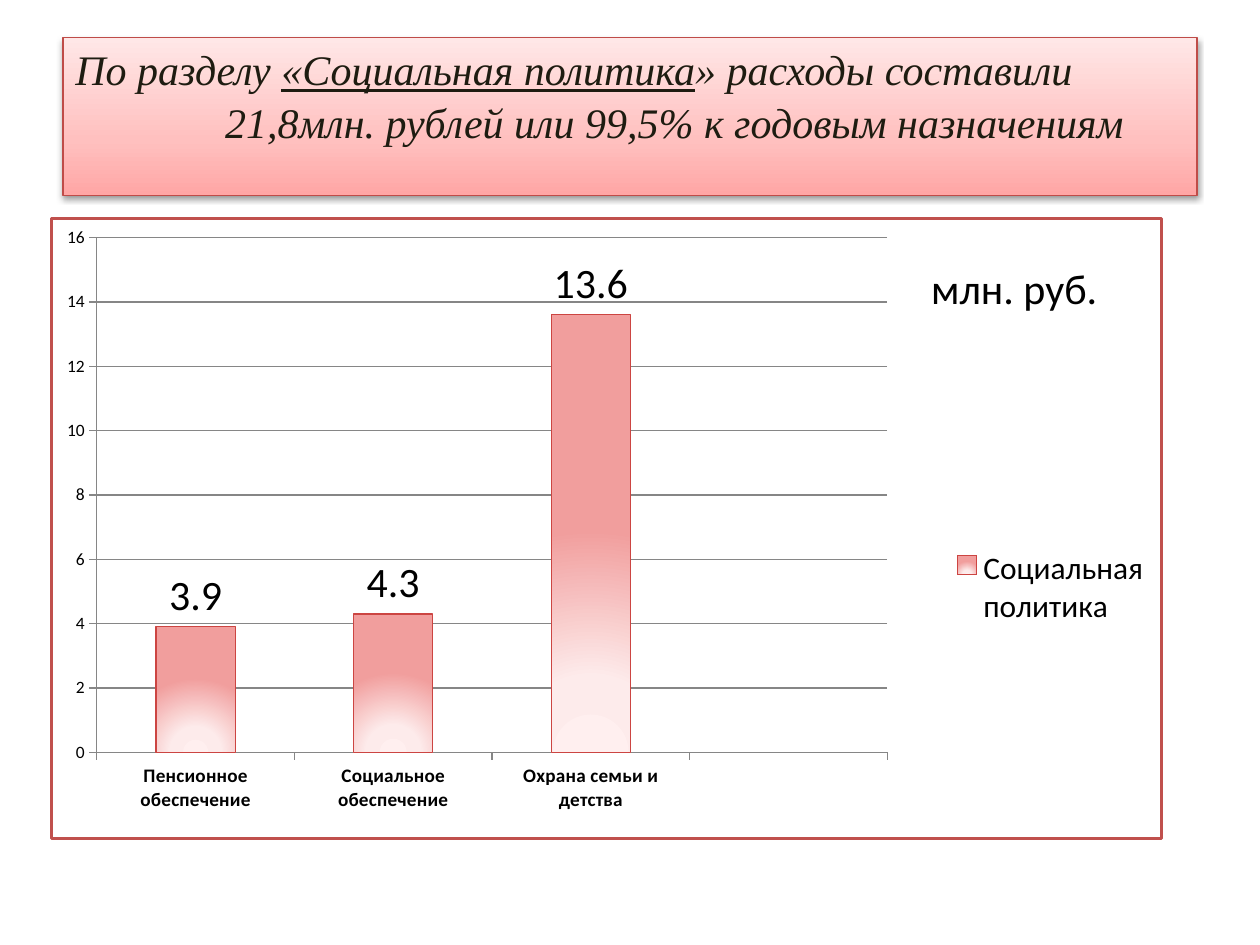
import pptx
import pptx.chart.data
import pptx.dml.color
import pptx.enum.chart
import pptx.enum.shapes
import pptx.enum.text
import pptx.oxml
import pptx.oxml.ns
import pptx.util


class Theme:
    title_font = "Times New Roman"
    body_font = "Calibri"
    title_color = "1E1C11"
    text_color = "000000"
    background = "FFFFFF"
    title_line = "BF4C48"
    chart_border = "C0504D"
    bar_line = "CC4542"
    grid_line = "868686"
    title_stops = [(0, "FFA6A5"), (35, "FFC0BF"), (100, "FFE7E7")]
    bar_stops = [(0, "FFEFEF"), (34, "FDEBEB"), (100, "F19E9D")]
    large = pptx.util.Pt(24)
    legend = pptx.util.Pt(18)
    category = pptx.util.Pt(11)
    small = pptx.util.Pt(10)


def color(value):
    return pptx.dml.color.RGBColor.from_string(value)


def set_gradient(properties, stops, direction):
    """Replace the solid fill of a shape or series with a gradient."""
    stop_xml = "".join(
        f'<a:gs pos="{position * 1000}"><a:srgbClr val="{value}"/></a:gs>'
        for position, value in stops)
    gradient = pptx.oxml.parse_xml(
        f'<a:gradFill {pptx.oxml.ns.nsdecls("a")} rotWithShape="1">'
        f'<a:gsLst>{stop_xml}</a:gsLst>{direction}</a:gradFill>')
    solid = properties.find(pptx.oxml.ns.qn("a:solidFill"))
    properties.replace(solid, gradient)


presentation = pptx.Presentation()
presentation.slide_width = pptx.util.Cm(25.4)
presentation.slide_height = pptx.util.Cm(19.05)
slide = presentation.slides.add_slide(presentation.slide_layouts[6])

# Title box
title = slide.shapes.add_shape(
    pptx.enum.shapes.MSO_SHAPE.RECTANGLE, pptx.util.Cm(1.27),
    pptx.util.Cm(0.76), pptx.util.Cm(22.86), pptx.util.Cm(3.18))
title.fill.solid()
title.line.color.rgb = color(Theme.title_line)
title.line.width = pptx.util.Pt(0.75)
title_properties = title._element.spPr
set_gradient(title_properties, Theme.title_stops,
             '<a:lin ang="16200000" scaled="1"/>')
title_properties.append(pptx.oxml.parse_xml(
    f'<a:effectLst {pptx.oxml.ns.nsdecls("a")}>'
    '<a:outerShdw blurRad="40000" dist="20000" dir="5400000" rotWithShape="0">'
    '<a:srgbClr val="000000"><a:alpha val="38000"/></a:srgbClr>'
    '</a:outerShdw></a:effectLst>'))

# Title text: the second line is indented
title_lines = [
    (0, [("По разделу ", False), ("«Социальная политика", True),
         ("» расходы составили", False)]),
    (3.02, [("21,8млн. рублей или 99,5% к годовым назначениям", False)]),
]
text_frame = title.text_frame
text_frame.word_wrap = True
text_frame.vertical_anchor = pptx.enum.text.MSO_ANCHOR.TOP
for index, (indent, runs) in enumerate(title_lines):
    paragraph = text_frame.paragraphs[0] if index == 0 else text_frame.add_paragraph()
    paragraph.alignment = pptx.enum.text.PP_ALIGN.LEFT
    paragraph.space_before = pptx.util.Pt(1.5 * index)
    paragraph._p.get_or_add_pPr().set("marL", str(pptx.util.Cm(indent)))
    for text, underlined in runs:
        run = paragraph.add_run()
        run.text = text
        run.font.name = Theme.title_font
        run.font.size = Theme.large
        run.font.italic = True
        run.font.underline = underlined
        run.font.color.rgb = color(Theme.title_color)

# Column chart, with an empty fourth category
chart_data = pptx.chart.data.CategoryChartData()
chart_data.categories = ["Пенсионное обеспечение", "Социальное обеспечение",
                         "Охрана семьи и детства", ""]
chart_data.add_series("Социальная политика", [3.9, 4.3, 13.6, None])
chart = slide.shapes.add_chart(
    pptx.enum.chart.XL_CHART_TYPE.COLUMN_CLUSTERED, pptx.util.Cm(1),
    pptx.util.Cm(4.37), pptx.util.Cm(22.45), pptx.util.Cm(12.57),
    chart_data).chart
chart.has_title = False
chart.font.name = Theme.body_font
chart.font.size = Theme.small
chart.font.color.rgb = color(Theme.text_color)

# Axes
value_axis = chart.value_axis
value_axis.minimum_scale = 0
value_axis.maximum_scale = 16
value_axis.major_unit = 2
value_axis.has_major_gridlines = True
category_axis = chart.category_axis
category_axis.tick_labels.font.size = Theme.category
category_axis.tick_labels.font.bold = True
for axis in (value_axis, category_axis):
    axis.major_tick_mark = pptx.enum.chart.XL_TICK_MARK.OUTSIDE
for item in (value_axis, category_axis, value_axis.major_gridlines):
    item.format.line.color.rgb = color(Theme.grid_line)
    item.format.line.width = pptx.util.Pt(0.75)

# Columns and value labels
plot = chart.plots[0]
plot.gap_width = 150
plot.vary_by_categories = False
series = plot.series[0]
series.format.fill.solid()
series.format.line.color.rgb = color(Theme.bar_line)
series.format.line.width = pptx.util.Pt(0.75)
set_gradient(series._element.spPr, Theme.bar_stops,
             '<a:path path="circle">'
             '<a:fillToRect l="50000" t="155000" r="50000" b="-55000"/></a:path>')
plot.has_data_labels = True
labels = plot.data_labels
labels.show_value = True
labels.position = pptx.enum.chart.XL_LABEL_POSITION.OUTSIDE_END
labels.font.size = Theme.large

# Legend
chart.has_legend = True
chart.legend.position = pptx.enum.chart.XL_LEGEND_POSITION.RIGHT
chart.legend.include_in_layout = False
chart.legend.font.size = Theme.legend

# Places of the plot area and the legend within the chart
chart_space = chart._chartSpace
layouts = [("c:plotArea", 0, '<c:layoutTarget val="inner"/>',
            (0.041, 0.031, 0.712, 0.83)),
           ("c:legend", 1, "", (0.81, 0.53, 0.18, 0.13))]
for tag, position, target, box in layouts:
    parent = chart_space.find(".//" + pptx.oxml.ns.qn(tag))
    for previous in parent.findall(pptx.oxml.ns.qn("c:layout")):
        parent.remove(previous)
    modes = '<c:xMode val="edge"/><c:yMode val="edge"/>'
    sizes = "".join(f'<c:{key} val="{value}"/>' for key, value in zip("xywh", box))
    parent.insert(position, pptx.oxml.parse_xml(
        f'<c:layout {pptx.oxml.ns.nsdecls("c")}><c:manualLayout>'
        f'{target}{modes}{sizes}</c:manualLayout></c:layout>'))

# Chart background and border
chart_space.find(pptx.oxml.ns.qn("c:chart")).addnext(pptx.oxml.parse_xml(
    f'<c:spPr {pptx.oxml.ns.nsdecls("c", "a")}>'
    f'<a:solidFill><a:srgbClr val="{Theme.background}"/></a:solidFill>'
    f'<a:ln w="{pptx.util.Pt(2)}"><a:solidFill>'
    f'<a:srgbClr val="{Theme.chart_border}"/></a:solidFill></a:ln></c:spPr>'))

# Unit label
unit = slide.shapes.add_textbox(pptx.util.Cm(18.26), pptx.util.Cm(5.16),
                                pptx.util.Cm(4.37), pptx.util.Cm(1.27))
unit.text_frame.word_wrap = True
unit.text_frame.text = "млн. руб."
paragraph = unit.text_frame.paragraphs[0]
paragraph.alignment = pptx.enum.text.PP_ALIGN.CENTER
run = paragraph.runs[0]
run.font.name = Theme.body_font
run.font.size = Theme.large
run.font.color.rgb = color(Theme.text_color)

presentation.save("out.pptx")
